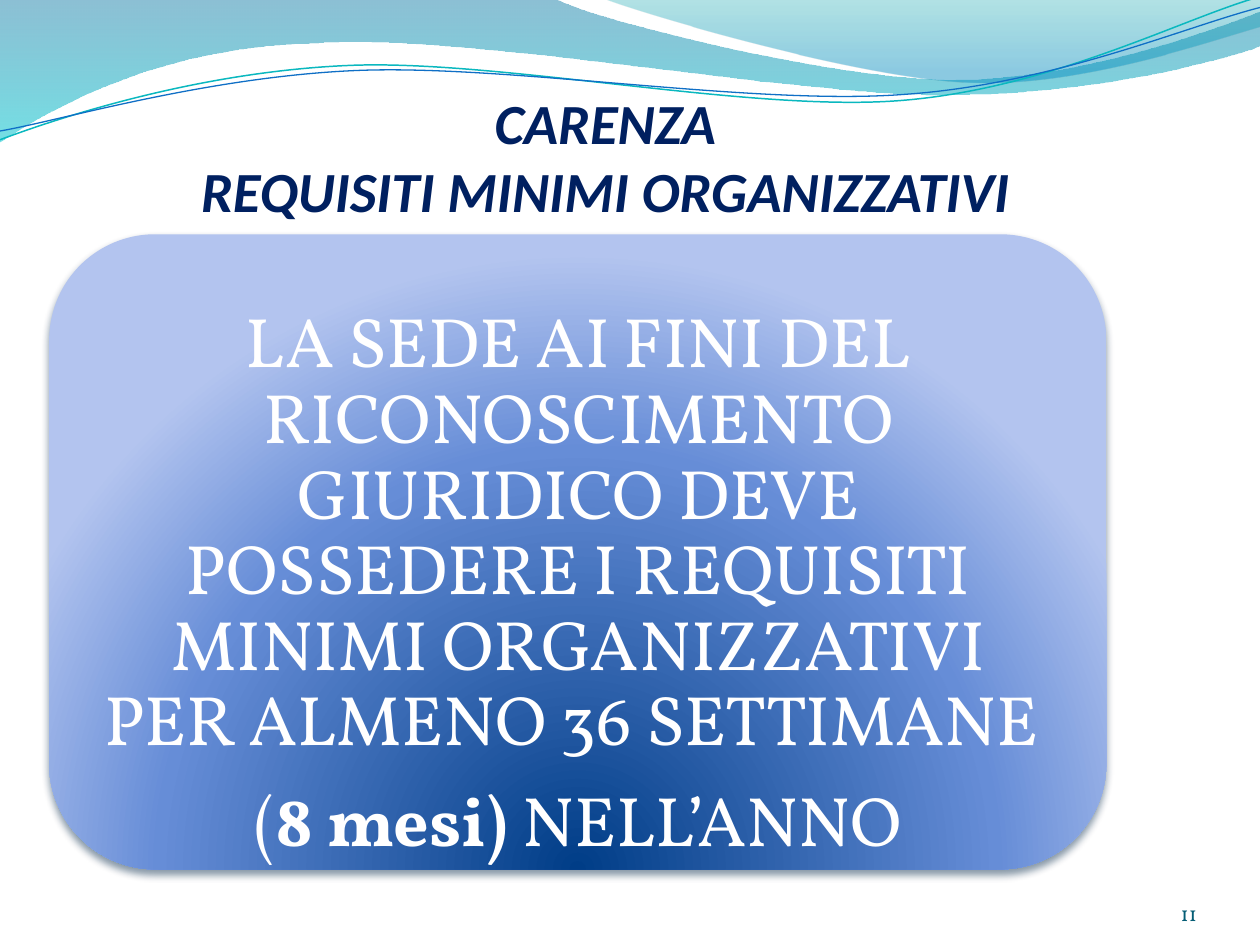
from math import cos, radians, sin

from lxml import etree
from pptx import Presentation
from pptx.dml.color import RGBColor
from pptx.enum.shapes import MSO_SHAPE as Shape
from pptx.enum.text import MSO_ANCHOR as Anchor, PP_ALIGN as Align
from pptx.oxml.ns import qn
from pptx.util import Inches, Pt

# Each wave is a list of points: 2 numbers draw a line, 6 draw a Bézier curve.
BAND = [(0, 0), (4.4, -0.01), (4.76, 0.17, 6.64, 0.63, 7.58, 0.63),
        (8.53, 0.63, 9.58, 0.26, 10, 0.09), (10.01, 0.36),
        (9.83, 0.44, 8.7, 0.76, 7.46, 0.75),
        (6.22, 0.75, 3.82, 0.28, 2.57, 0.34),
        (1.29, 0.36, 0.46, 0.83, -0.01, 1.13)]
CREST = [(4.79, -0.01), (5.09, 0.11, 6.82, 0.62, 7.69, 0.65),
         (8.56, 0.69, 9.61, 0.32, 10, 0.21), (10, 0)]
TEAL = [(0, 1.11), (0.48, 0.93, 1.58, 0.57, 2.77, 0.52),
        (3.95, 0.47, 5.93, 0.89, 7.13, 0.8),
        (8.33, 0.71, 9.38, 0.15, 9.98, -0.02)]
BLUE = [(0, 1.04), (0.47, 0.96, 1.64, 0.61, 2.83, 0.56),
        (4.03, 0.51, 5.97, 0.84, 7.17, 0.75),
        (8.36, 0.67, 9.41, 0.21, 10, 0.06)]
TILT = -2.7


def color(code):
    return RGBColor.from_string(code)


def node(up, tag, **attrs):
    return etree.SubElement(up, qn("a:" + tag),
                            {key: str(val) for key, val in attrs.items()})


def tint(up, code, alpha):
    node(node(up, "srgbClr", val=code), "alpha", val=alpha * 1000)


def turn(dot, angle, mid=(5, 0.58)):
    """Rotate a point clockwise round the middle of the waves."""
    x, y = dot[0] - mid[0], dot[1] - mid[1]
    c, s = cos(radians(angle)), sin(radians(angle))
    return mid[0] + x * c - y * s, mid[1] + x * s + y * c


def bend(shape, steps):
    """Join the three lines of each curved step into one Bézier curve."""
    lines = iter(list(shape._element.iter(qn("a:lnTo"))))
    for step in steps[1:]:
        line = next(lines)
        if len(step) == 6:
            curve = etree.Element(qn("a:cubicBezTo"))
            line.addprevious(curve)
            for part in (line, next(lines), next(lines)):
                curve.append(part[0])
                part.getparent().remove(part)


class Deck:
    def __init__(self):
        self.file = Presentation()
        self.file.slide_width = Inches(10)
        self.file.slide_height = Inches(7.5)
        self.slide = self.file.slides.add_slide(self.file.slide_layouts[6])
        self.shapes = self.slide.shapes
        self.title = dict(name="Calibri", size=Pt(32.4), bold=True,
                          italic=True, color="002060")
        self.body = dict(name="Vollkorn", size=Pt(40), color="FFFFFF")
        self.page = dict(name="Vollkorn", size=Pt(12), color="045D75")

    def blend(self, shape, stops, focus=None):
        """Fill with a gradient: downward, or round the focus if given."""
        fill = etree.Element(qn("a:gradFill"), rotWithShape="1")
        group = node(fill, "gsLst")
        for pos, code, alpha in stops:
            tint(node(group, "gs", pos=pos * 1000), code, alpha)
        if focus:
            sides = {k: v * 1000 for k, v in zip("ltrb", focus)}
            node(node(fill, "path", path="circle"), "fillToRect", **sides)
        else:
            node(fill, "lin", ang=90 * 60000, scaled=1)
        geom = shape._element.spPr.find(qn("a:custGeom"))
        if geom is None:
            geom = shape._element.spPr.find(qn("a:prstGeom"))
        geom.addnext(fill)
        shape.line.fill.background()

    def wave(self, steps, closed, tilt=0):
        dots = [turn(step[i:i + 2], -tilt)
                for step in steps for i in range(0, len(step), 2)]
        first, *rest = [(Inches(x), Inches(y)) for x, y in dots]
        pen = self.shapes.build_freeform(*first)
        pen.add_line_segments(rest, close=closed)
        shape = pen.convert_to_shape()
        bend(shape, steps)
        shape.rotation = tilt
        shape.shadow.inherit = False
        return shape

    def area(self, steps, stops):
        self.blend(self.wave(steps, True), stops)

    def curve(self, steps, code, width):
        shape = self.wave(steps, False, TILT)
        shape.fill.background()
        shape.line.color.rgb = color(code)
        shape.line.width = Pt(width)

    def panel(self, box, stops, focus):
        shape = self.shapes.add_shape(Shape.ROUNDED_RECTANGLE,
                                      *map(Inches, box))
        shape.shadow.inherit = False
        self.blend(shape, stops, focus)
        glow = node(shape._element.spPr.find(qn("a:effectLst")), "outerShdw",
                    blurRad=Pt(4.5), dist=Pt(3), dir=90 * 60000,
                    rotWithShape=0)
        tint(glow, "042747", 48)

    def text(self, box, paras, style, align, anchor, pads=(0, 0, 0, 0), **gaps):
        """Add paragraphs, each a list of (words, changes of style)."""
        frame = self.shapes.add_textbox(*map(Inches, box)).text_frame
        frame.word_wrap = True
        frame.vertical_anchor = anchor
        for side, pad in zip(("left", "top", "right", "bottom"), pads):
            setattr(frame, "margin_" + side, Inches(pad))
        for i, runs in enumerate(paras):
            para = frame.add_paragraph() if i else frame.paragraphs[0]
            for key, val in dict(gaps, alignment=align).items():
                setattr(para, key, val)
            for words, change in runs:
                if words == "\n":
                    para.add_line_break()
                    continue
                run = para.add_run()
                run.text = words
                look = {**style, **change}
                run.font.color.rgb = color(look.pop("color"))
                for key, val in look.items():
                    setattr(run.font, key, val)


def main():
    deck = Deck()
    deck.area(BAND, [(0, "0074A1", 45), (100, "00C6CF", 55)])
    deck.area(CREST, [(0, "00A1A9", 30), (80, "008BBF", 45)])
    deck.curve(TEAL, "0AB8BF", 0.85)
    deck.curve(BLUE, "0F6FC6", 0.75)
    deck.text((0.67, 0.67, 8.27, 1.11),
              [[("CARENZA", {}), ("\n", {}),
                ("REQUISITI MINIMI ORGANIZZATIVI", {})]],
              deck.title, Align.CENTER, Anchor.BOTTOM, (0, 0.05, 0, 0))
    deck.panel((0.39, 1.86, 8.39, 5.04),
               [(0, "003D87", 100), (68, "668DD7", 100), (100, "B3C4EF", 100)],
               (50, 130, 50, -30))
    deck.text((0.64, 2.1, 7.9, 4.55),
              [[("LA SEDE AI FINI DEL RICONOSCIMENTO GIURIDICO DEVE POSSEDERE "
                 "I REQUISITI MINIMI ORGANIZZATIVI PER ALMENO 36 SETTIMANE ",
                 {})],
               [("(", {}), ("8 mesi) ", {"bold": True}), ("NELL’ANNO", {})]],
              deck.body, Align.CENTER, Anchor.TOP, (0.17, 0.34, 0.17, 0),
              line_spacing=0.9, space_after=Pt(14))
    deck.text((8.67, 6.95, 0.83, 0.4), [[("11", {})]],
              deck.page, Align.RIGHT, Anchor.BOTTOM)
    deck.file.save("out.pptx")


if __name__ == "__main__":
    main()
